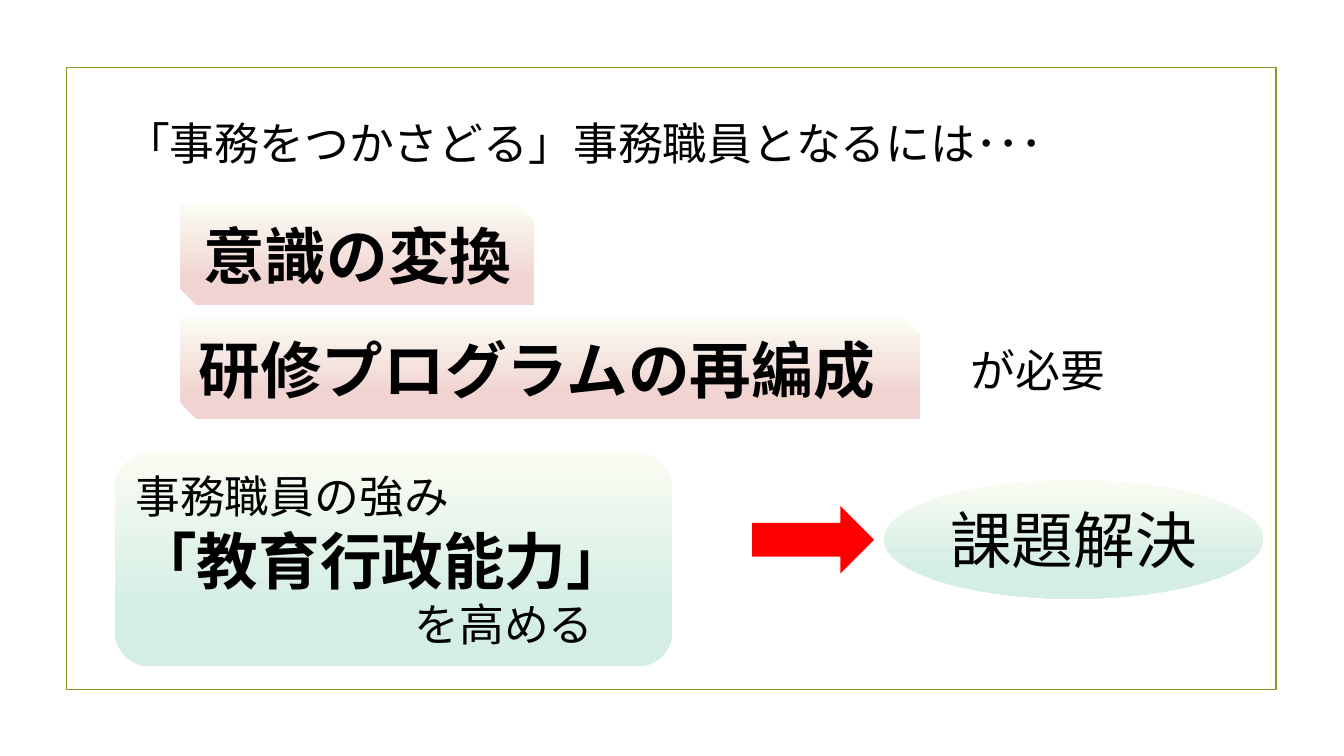
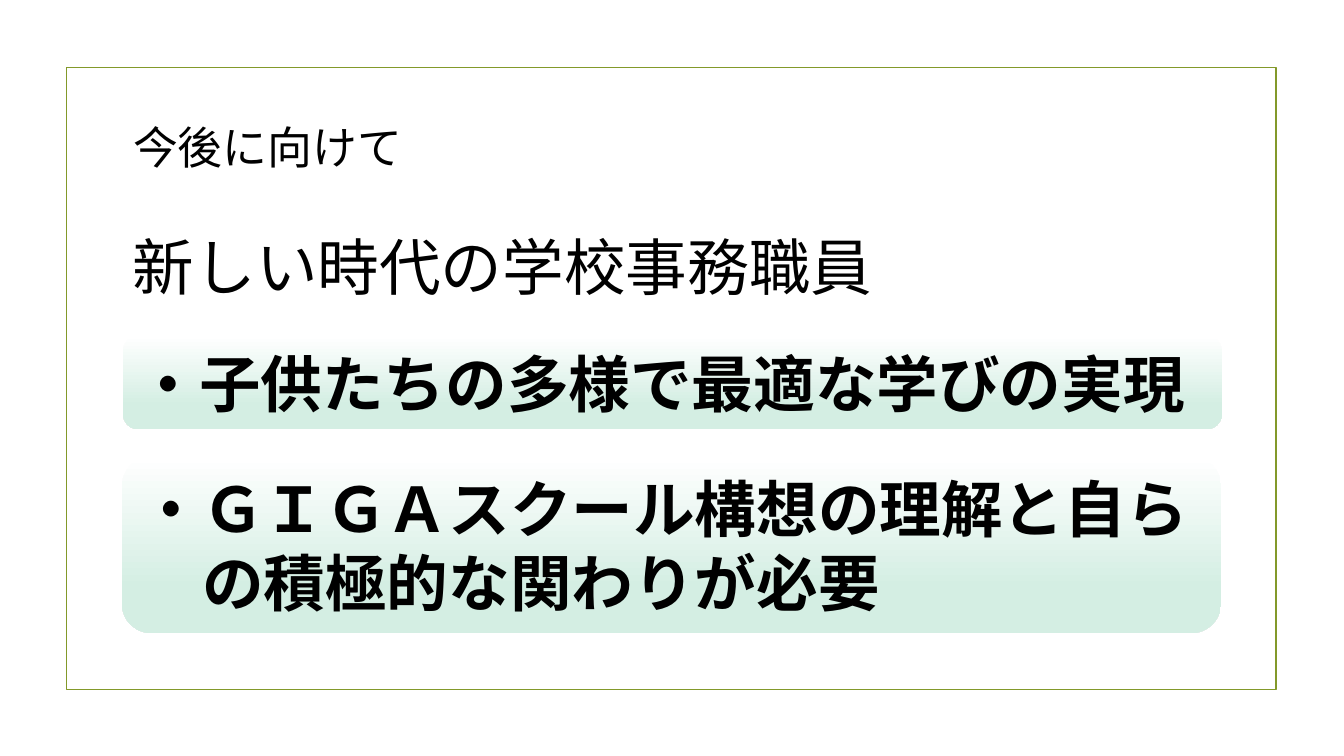
import pptx
import pptx.util
import pptx.dml.color
import pptx.enum.shapes
import pptx.enum.text
import pptx.oxml
import pptx.oxml.ns

WIDTH, HEIGHT = 13.33, 7.5
FONT = "Noto Sans CJK JP"
NORMAL, LARGE = 32, 44
COLORS = {
    "text": "000000", "frame": "83992A", "arrow": "FF0000",
    "white": "FFFFFF", "cream": "FAFCF3", "pink": "F1D4D2", "mint": "D4EEE3",
}
FRAME = (0.66, 0.67, 12, 6.17)
PINK, MINT, PALE_MINT = ("cream", "pink"), ("cream", "mint"), ("white", "mint")
SHAPES = pptx.enum.shapes.MSO_SHAPE
LEFT, CENTER = pptx.enum.text.PP_ALIGN.LEFT, pptx.enum.text.PP_ALIGN.CENTER

# fields: text, size, bold, indent
SLIDES = [
    {
        "title": ("「事務をつかさどる」事務職員となるには･･･", (1.14, 1.09, 11.91, 0.64)),
        "panels": [
            (SHAPES.SNIP_2_DIAG_RECTANGLE, (1.79, 2.03, 3.51, 1), PINK, CENTER,
             [("意識の変換", LARGE, True, 0)]),
            (SHAPES.SNIP_2_DIAG_RECTANGLE, (1.79, 3.16, 7.34, 1), PINK, LEFT,
             [("研修プログラムの再編成", LARGE, True, 0)]),
            (SHAPES.ROUNDED_RECTANGLE, (1.14, 4.49, 5.53, 2.12), MINT, LEFT,
             [("事務職員の強み", NORMAL, False, 0),
              ("「教育行政能力」", LARGE, True, 0),
              ("を高める", NORMAL, False, 2.77)]),
            (SHAPES.OVAL, (8.77, 4.76, 3.76, 1.18), MINT, CENTER,
             [("課題解決", LARGE, False, 0)]),
        ],
        "arrow": (7.46, 5.02, 1.21, 0.67),
        "label": ("が必要", NORMAL, (9.53, 3.35, 1.67, 0.64)),
    },
    {
        "title": ("今後に向けて", (1.22, 1.13, 2.91, 0.64)),
        "panels": [
            (SHAPES.ROUNDED_RECTANGLE, (1.22, 3.33, 10.9, 0.93), PALE_MINT, LEFT,
             [("・子供たちの多様で最適な学びの実現", LARGE, True, 0)]),
            (SHAPES.ROUNDED_RECTANGLE, (1.21, 4.53, 10.9, 1.75), PALE_MINT, LEFT,
             [("・ＧＩＧＡスクール構想の理解と自ら", LARGE, True, 0),
              ("の積極的な関わりが必要", LARGE, True, LARGE / 72)]),
        ],
        "label": ("新しい時代の学校事務職員", LARGE, (1.22, 2.22, 7.78, 0.84)),
    },
]


def color(name):
    return pptx.dml.color.RGBColor.from_string(COLORS[name])


def inches(box):
    return [pptx.util.Inches(length) for length in box]


def write(holder, lines, align=LEFT, wrap=True):
    frame = holder.text_frame
    frame.word_wrap = wrap
    frame.auto_size = pptx.enum.text.MSO_AUTO_SIZE.NONE
    frame.vertical_anchor = pptx.enum.text.MSO_ANCHOR.MIDDLE
    for number, (text, size, bold, indent) in enumerate(lines):
        paragraph = frame.add_paragraph() if number else frame.paragraphs[0]
        paragraph.alignment = align
        if indent:
            properties = paragraph._p.get_or_add_pPr()
            properties.set("marL", str(pptx.util.Inches(indent)))
            properties.set("indent", "0")
        run = paragraph.add_run()
        run.text = text
        run.font.size = pptx.util.Pt(size)
        run.font.bold = bold
        run.font.color.rgb = color("text")
        run.font.name = FONT
        east_asian = pptx.oxml.parse_xml(
            f'<a:ea {pptx.oxml.ns.nsdecls("a")} typeface="{FONT}"/>')
        run.font._element.find(pptx.oxml.ns.qn("a:latin")).addnext(east_asian)


def add_plain_shape(slide, kind, box):
    shape = slide.shapes.add_shape(kind, *inches(box))
    shape.shadow.inherit = False
    shape.line.fill.background()
    return shape


def add_frame(slide):
    border = add_plain_shape(slide, SHAPES.RECTANGLE, FRAME)
    border.fill.background()
    border.line.color.rgb = color("frame")
    border.line.width = pptx.util.Pt(1.25)


def add_title(slide, text, box):
    title = slide.shapes.title
    title.left, title.top, title.width, title.height = inches(box)
    write(title, [(text, NORMAL, False, 0)])


def add_panel(slide, kind, box, shades, align, lines):
    panel = add_plain_shape(slide, kind, box)
    panel.fill.gradient()
    panel.fill.gradient_angle = 270
    for stop, shade, position in zip(panel.fill.gradient_stops, shades, (0, 0.74)):
        stop.color.rgb = color(shade)
        stop.position = position
    write(panel, lines, align, wrap=align == LEFT)


def add_arrow(slide, box):
    arrow = add_plain_shape(slide, SHAPES.RIGHT_ARROW, box)
    arrow.fill.solid()
    arrow.fill.fore_color.rgb = color("arrow")


def add_label(slide, text, size, box):
    write(slide.shapes.add_textbox(*inches(box)), [(text, size, False, 0)])


def main():
    deck = pptx.Presentation()
    deck.slide_width, deck.slide_height = inches((WIDTH, HEIGHT))
    title_only = deck.slide_layouts[5]
    for content in SLIDES:
        slide = deck.slides.add_slide(title_only)
        add_frame(slide)
        add_title(slide, *content["title"])
        for panel in content["panels"]:
            add_panel(slide, *panel)
        if "arrow" in content:
            add_arrow(slide, content["arrow"])
        add_label(slide, *content["label"])
    deck.save("out.pptx")


if __name__ == "__main__":
    main()
